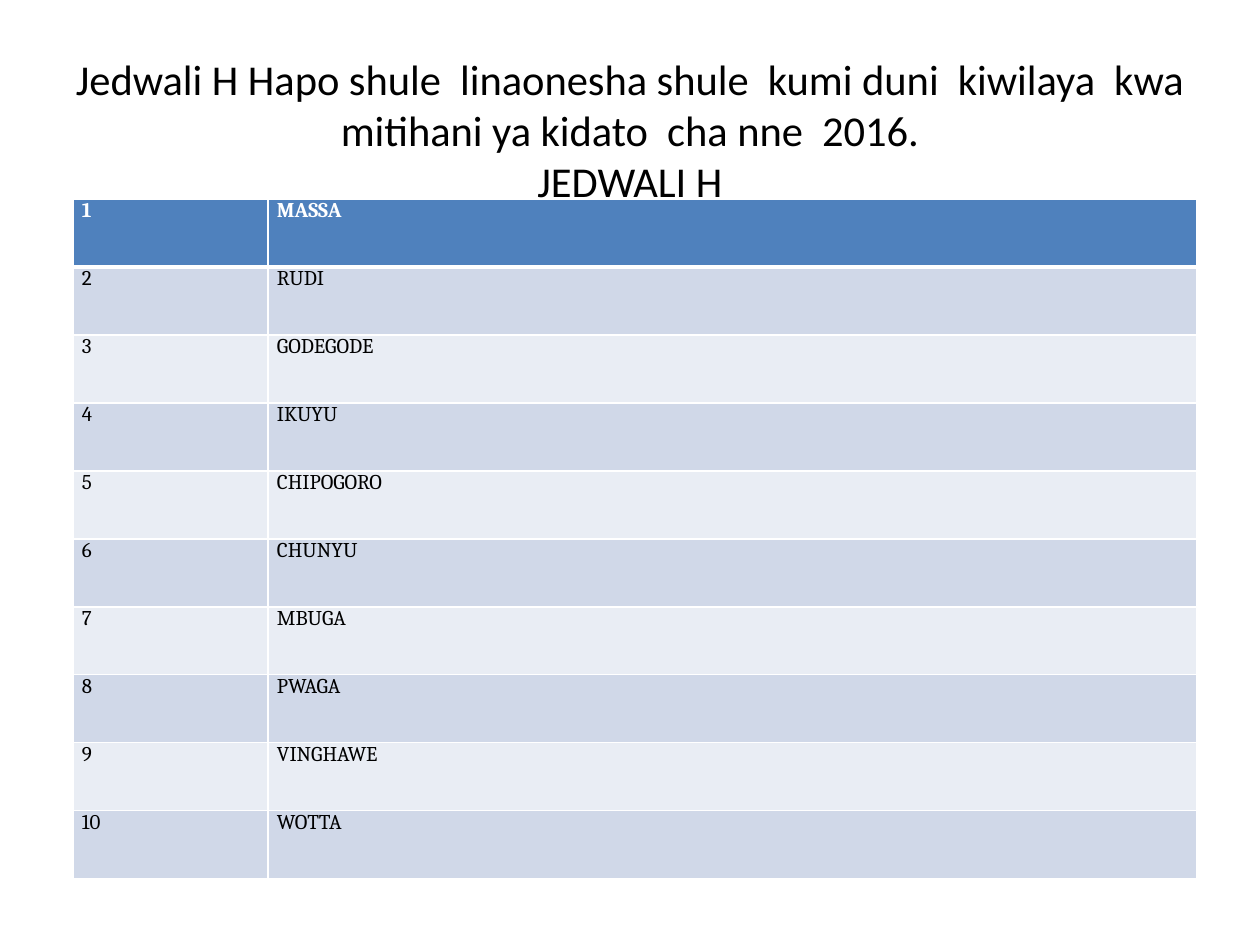
import pptx
import pptx.dml.color
import pptx.enum.text
import pptx.oxml
import pptx.oxml.ns
import pptx.util

RGB = pptx.dml.color.RGBColor
ALIGN = pptx.enum.text.PP_ALIGN
ANCHOR = pptx.enum.text.MSO_ANCHOR

TITLE = [
    "Jedwali H Hapo shule  linaonesha shule  kumi duni  kiwilaya  kwa mitihani ya kidato  cha nne  2016.",
    "JEDWALI H",
]
SCHOOLS = ["MASSA", "RUDI", "GODEGODE", "IKUYU", "CHIPOGORO",
           "CHUNYU", "MBUGA", "PWAGA", "VINGHAWE", "WOTTA"]

BLACK = RGB(0x00, 0x00, 0x00)
WHITE = RGB(0xFF, 0xFF, 0xFF)
BLUE = RGB(0x4F, 0x81, 0xBD)
BANDS = [RGB(0xE9, 0xED, 0xF4), RGB(0xD0, 0xD8, 0xE8)]

COLS = [195, 929]
ROW = 68


def px(count):
    return pptx.util.Emu(count * 914400 // 126)


def add_run(para, text, font, size, color, bold=False):
    run = para.add_run()
    run.text = text
    run.font.name = font
    run.font.size = pptx.util.Pt(size)
    run.font.color.rgb = color
    run.font.bold = bold


def add_title(slide):
    frame = slide.shapes.add_textbox(px(63), px(38), px(1134), px(158)).text_frame
    frame.word_wrap = True
    frame.vertical_anchor = ANCHOR.TOP
    frame.margin_left = frame.margin_right = px(12)
    frame.margin_top, frame.margin_bottom = px(15), 0
    para = frame.paragraphs[0]
    para.alignment = ALIGN.CENTER
    for i, line in enumerate(TITLE):
        if i:
            para.add_line_break()
        add_run(para, line, "Calibri", 24.3, BLACK)


def set_edges(cell, widths):
    """Draw white cell borders; widths maps each side (L, R, T, B) to points."""
    props = cell._tc.get_or_add_tcPr()
    for i, (side, width) in enumerate(widths.items()):
        edge = pptx.oxml.parse_xml(
            f'<a:ln{side} {pptx.oxml.ns.nsdecls("a")} w="{pptx.util.Pt(width)}">'
            f'<a:solidFill><a:srgbClr val="{WHITE}"/></a:solidFill></a:ln{side}>')
        props.insert(i, edge)


def fill_cell(cell, text, row):
    head = row == 0
    cell.fill.solid()
    cell.fill.fore_color.rgb = BLUE if head else BANDS[row % 2]
    cell.margin_left = cell.margin_right = px(9)
    cell.margin_top = cell.margin_bottom = 0
    para = cell.text_frame.paragraphs[0]
    para.alignment = ALIGN.JUSTIFY
    para.space_after = pptx.util.Pt(8)
    add_run(para, text, "Cambria", 12, WHITE if head else BLACK, head)
    set_edges(cell, {"L": 1, "R": 1, "T": 3 if row == 1 else 1, "B": 3 if head else 1})


def add_schools(slide):
    count = len(SCHOOLS)
    table = slide.shapes.add_table(
        count, len(COLS), px(73), px(199), px(sum(COLS)), px(ROW * count)).table
    for col, width in zip(table.columns, COLS):
        col.width = px(width)
    for row, school in enumerate(SCHOOLS):
        table.rows[row].height = px(ROW)
        for col, text in enumerate([str(row + 1), school]):
            fill_cell(table.cell(row, col), text, row)


def main():
    deck = pptx.Presentation()
    deck.slide_width, deck.slide_height = px(1260), px(945)
    slide = deck.slides.add_slide(deck.slide_layouts[6])
    add_title(slide)
    add_schools(slide)
    deck.save("out.pptx")


if __name__ == "__main__":
    main()
